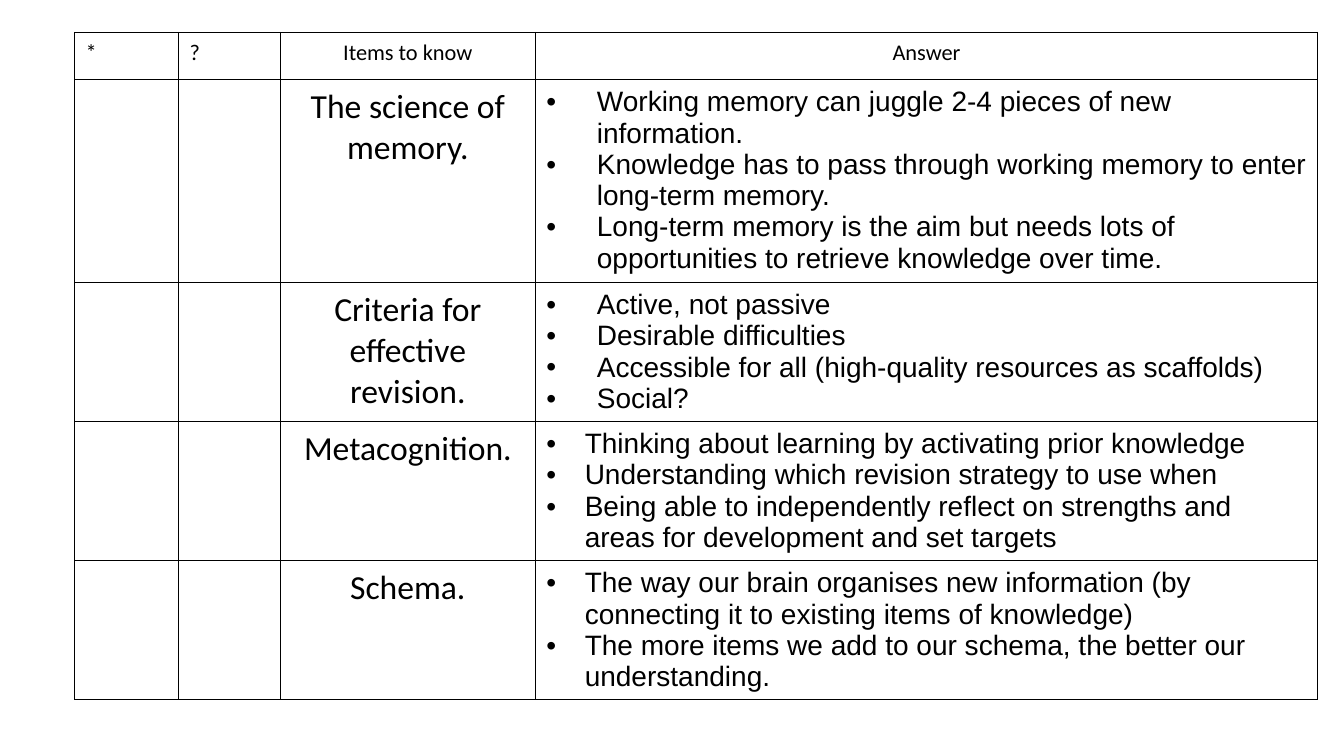
from lxml.etree import SubElement
from pptx import Presentation
from pptx.dml.color import RGBColor
from pptx.enum.text import PP_ALIGN as Align
from pptx.oxml.ns import qn
from pptx.util import Inches, Pt

BLACK = "000000"
HEADINGS = ["*", "?", "Items to know", "Answer"]
COLUMN_WIDTHS = [1.03, 1.01, 2.53, 7.76]
HEADER_HEIGHT = 0.47

# Item, row height, bullet indent, answers
TOPICS = [
    ("The science of memory.", 2.01, 0.5, [
        "Working memory can juggle 2-4 pieces of new information.",
        "Knowledge has to pass through working memory to enter long-term memory.",
        "Long-term memory is the aim but needs lots of opportunities to retrieve "
        "knowledge over time.",
    ]),
    ("Criteria for effective revision.", 1.38, 0.5, [
        "Active, not passive",
        "Desirable difficulties",
        "Accessible for all (high-quality resources as scaffolds)",
        "Social?",
    ]),
    ("Metacognition.", 1.38, 0.38, [
        "Thinking about learning by activating prior knowledge",
        "Understanding which revision strategy to use when",
        "Being able to independently reflect on strengths and areas for "
        "development and set targets",
    ]),
    ("Schema.", 1.38, 0.38, [
        "The way our brain organises new information (by connecting it to "
        "existing items of knowledge)",
        "The more items we add to our schema, the better our understanding.",
    ]),
]


def color(hex_code):
    return RGBColor.from_string(hex_code)


def add_bullet(paragraph, indent):
    props = paragraph._p.get_or_add_pPr()
    props.set("marL", str(Inches(indent)))
    props.set("indent", str(-Inches(indent)))
    SubElement(props, qn("a:buFont"), typeface="Arial")
    SubElement(props, qn("a:buChar"), char="•")


def write(paragraph, text, size=16, font="Calibri", align=Align.LEFT, indent=None):
    if indent:
        add_bullet(paragraph, indent)
    paragraph.alignment = align
    run = paragraph.add_run()
    run.text = text
    run.font.size = Pt(size)
    run.font.name = font
    run.font.bold = False
    run.font.color.rgb = color(BLACK)


def style_cell(cell):
    cell.margin_left = cell.margin_right = Inches(0.11)
    cell.margin_top = cell.margin_bottom = Inches(0.07)
    props = cell._tc.get_or_add_tcPr()
    for side in ("a:lnL", "a:lnR", "a:lnT", "a:lnB"):
        border = SubElement(props, qn(side), w=str(Pt(0.75)))
        border_fill = SubElement(border, qn("a:solidFill"))
        SubElement(border_fill, qn("a:srgbClr"), val=BLACK)
    cell.fill.background()


def add_grid(slide):
    heights = [HEADER_HEIGHT] + [height for _, height, _, _ in TOPICS]
    frame = slide.shapes.add_table(
        len(heights), len(COLUMN_WIDTHS), Inches(0.74), Inches(0.32),
        Inches(sum(COLUMN_WIDTHS)), Inches(sum(heights)))
    grid = frame.table
    grid.first_row = grid.horz_banding = False
    for column, width in zip(grid.columns, COLUMN_WIDTHS):
        column.width = Inches(width)
    for row, height in zip(grid.rows, heights):
        row.height = Inches(height)
    for cell in grid.iter_cells():
        style_cell(cell)
    return grid


def fill_answers(cell, answers, indent):
    body = cell.text_frame
    for i, answer in enumerate(answers):
        paragraph = body.add_paragraph() if i else body.paragraphs[0]
        write(paragraph, answer, size=20, font="Arial", indent=indent)


def main():
    prs = Presentation()
    prs.slide_width, prs.slide_height = Inches(13.33), Inches(7.5)
    slide = prs.slides.add_slide(prs.slide_layouts[6])
    organiser = add_grid(slide)

    # Header row
    for col, heading in enumerate(HEADINGS):
        write(organiser.cell(0, col).text_frame.paragraphs[0], heading,
              align=Align.CENTER if col > 1 else Align.LEFT)

    # Topic rows
    for row, (item, _, indent, answers) in enumerate(TOPICS, start=1):
        write(organiser.cell(row, 2).text_frame.paragraphs[0], item,
              size=24, align=Align.CENTER)
        fill_answers(organiser.cell(row, 3), answers, indent)

    prs.save("out.pptx")


if __name__ == "__main__":
    main()
